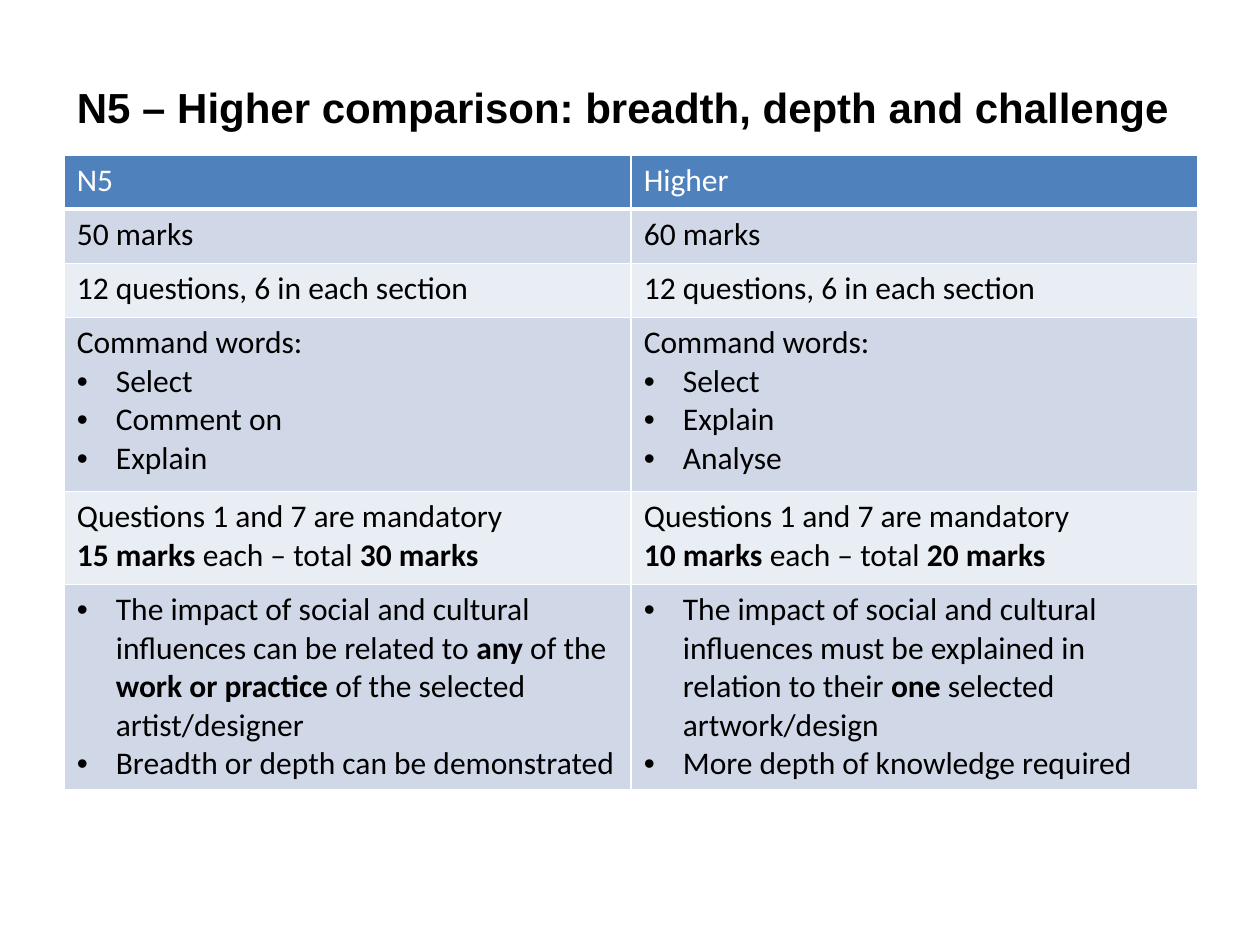
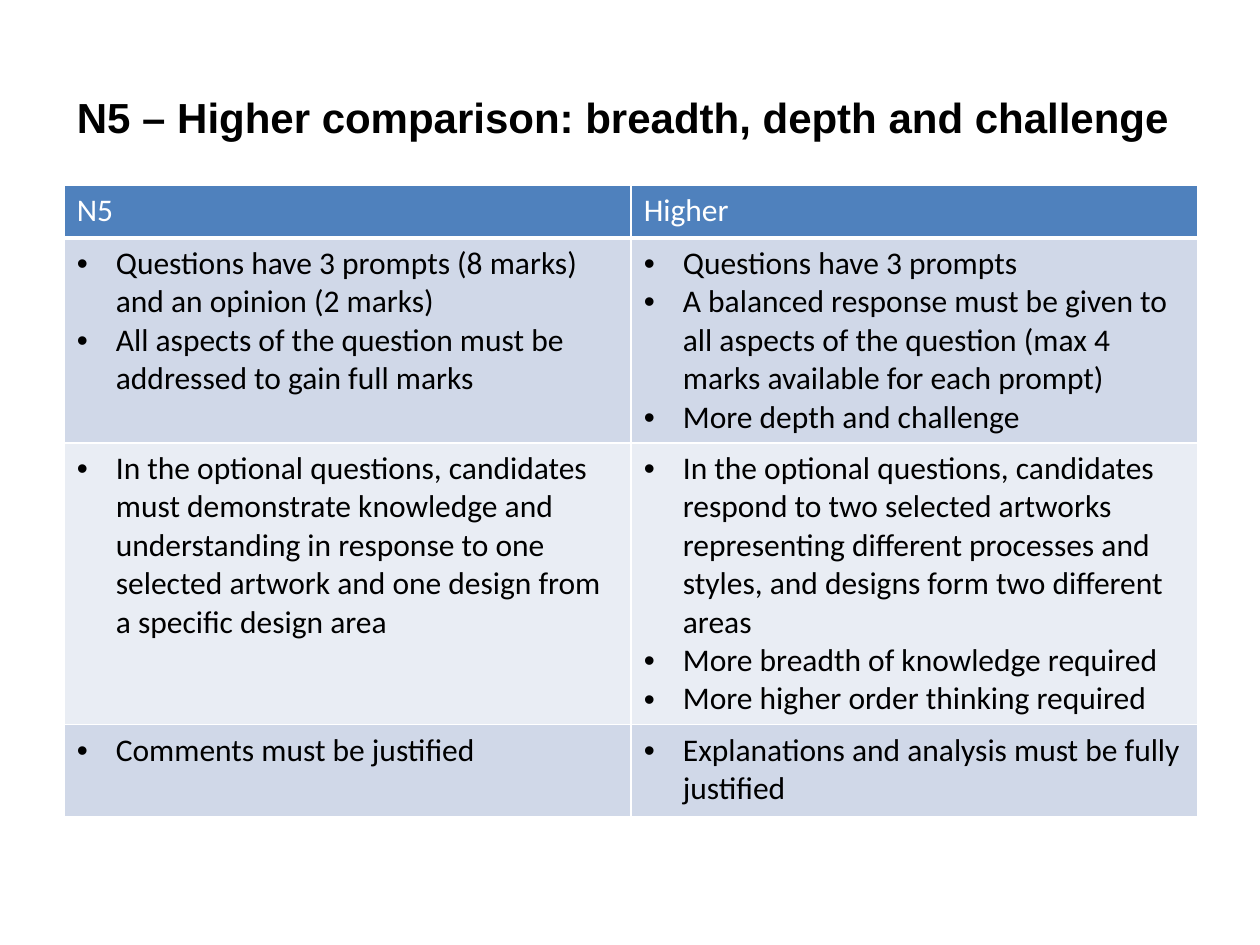
from lxml import etree
from pptx import Presentation
from pptx.dml.color import RGBColor
from pptx.enum.text import MSO_ANCHOR, MSO_AUTO_SIZE, PP_ALIGN
from pptx.oxml.ns import qn
from pptx.util import Inches, Pt

TITLE = "N5 – Higher comparison: breadth, depth and challenge"
HEADINGS = (["N5"], ["Higher"])
BULLET = "• "
BOLD_MARK = "**"

SLIDES = [
    {
        "title_top": 0.6, "title_height": 0.63,
        "table_top": 1.23, "table_height": 5.02,
        "row_heights": [0.43, 0.43, 0.43, 1.38, 0.74, 1.38],
        "rows": [
            HEADINGS,
            (["50 marks"], ["60 marks"]),
            (["12 questions, 6 in each section"], ["12 questions, 6 in each section"]),
            (["Command words:", "• Select", "• Comment on", "• Explain"],
             ["Command words:", "• Select", "• Explain", "• Analyse"]),
            (["Questions 1 and 7 are mandatory", "**15 marks** each – total **30 marks**"],
             ["Questions 1 and 7 are mandatory", "**10 marks** each – total **20 marks**"]),
            (["• The impact of social and cultural influences can be related to **any** of the "
              "**work or practice **of the selected artist/designer",
              "• Breadth or depth can be demonstrated"],
             ["• The impact of social and cultural influences must be explained in relation to "
              "their **one** selected artwork/design",
              "• More depth of knowledge required"]),
        ],
    },
    {
        "title_top": 0.68, "title_height": 0.55,
        "table_top": 1.47, "table_height": 4.95,
        "row_heights": [0.42, 1.36, 2.07, 0.73],
        "rows": [
            HEADINGS,
            (["• Questions have 3 prompts (8 marks) and an opinion (2 marks)",
              "• All aspects of the question must be addressed to gain full marks"],
             ["• Questions have 3 prompts",
              "• A balanced response must be given to all aspects of the question "
              "(max 4 marks available for each prompt)",
              "• More depth and challenge"]),
            (["• In the optional questions, candidates must demonstrate knowledge and "
              "understanding in response to one selected artwork and one design from a "
              "specific design area"],
             ["• In the optional questions, candidates respond to two selected artworks "
              "representing different processes and styles, and designs form two different areas",
              "• More breadth of knowledge required",
              "• More higher order thinking required"]),
            (["• Comments must be justified"],
             ["• Explanations and analysis must be fully justified"]),
        ],
    },
]

LEFT, WIDTH = Inches(0.51), Inches(9)
INDENT = Inches(0.31)
TITLE_FONT, TABLE_FONT = "Arial", "Calibri"
TITLE_SIZE, TABLE_SIZE = Pt(24), Pt(18)
BLACK = RGBColor(0x00, 0x00, 0x00)
WHITE = RGBColor(0xFF, 0xFF, 0xFF)
HEADER_BLUE = RGBColor(0x4F, 0x81, 0xBD)
BANDS = [RGBColor(0xD0, 0xD8, 0xE8), RGBColor(0xE9, 0xED, 0xF4)]
HEADER_BORDERS = {"lnL": 1, "lnR": 1, "lnT": 1, "lnB": 3}
ALIGN_LEFT = PP_ALIGN.LEFT
ANCHOR_TOP = MSO_ANCHOR.TOP
NO_AUTOFIT = MSO_AUTO_SIZE.NONE
TITLE_ONLY = 5


def style_span(span, font_name, size, color, bold):
    span.font.name = font_name
    span.font.size = size
    span.font.bold = bold
    span.font.color.rgb = color


def add_title(page, top, height):
    box = page.shapes.title
    box.left, box.top, box.width, box.height = LEFT, Inches(top), WIDTH, Inches(height)
    frame = box.text_frame
    frame.text = TITLE
    frame.word_wrap = True
    frame.auto_size = NO_AUTOFIT
    frame.vertical_anchor = ANCHOR_TOP
    para = frame.paragraphs[0]
    para.alignment = ALIGN_LEFT
    style_span(para.runs[0], TITLE_FONT, TITLE_SIZE, BLACK, True)


def add_bullet(para):
    properties = para._p.get_or_add_pPr()
    properties.set("marL", str(INDENT))
    properties.set("indent", str(-INDENT))
    etree.SubElement(properties, qn("a:buFont"), typeface=TITLE_FONT)
    etree.SubElement(properties, qn("a:buChar"), char=BULLET.strip())


def add_header_borders(cell):
    properties = cell._tc.get_or_add_tcPr()
    for position, (side, points) in enumerate(HEADER_BORDERS.items()):
        line = etree.Element(qn(f"a:{side}"), w=str(Pt(points)))
        fill = etree.SubElement(line, qn("a:solidFill"))
        etree.SubElement(fill, qn("a:srgbClr"), val=str(WHITE))
        properties.insert(position, line)


def fill_cell(cell, lines, background, color):
    cell.fill.solid()
    cell.fill.fore_color.rgb = background
    frame = cell.text_frame
    for index, line in enumerate(lines):
        para = frame.paragraphs[0] if index == 0 else frame.add_paragraph()
        if line.startswith(BULLET):
            add_bullet(para)
        for part, text in enumerate(line.removeprefix(BULLET).split(BOLD_MARK)):
            if text:
                span = para.add_run()
                span.text = text
                style_span(span, TABLE_FONT, TABLE_SIZE, color, part % 2 == 1)


def add_comparison(page, content):
    rows = content["rows"]
    columns = len(HEADINGS)
    height = Inches(content["table_height"])
    graphic = page.shapes.add_table(
        len(rows), columns, LEFT, Inches(content["table_top"]), WIDTH, height)
    table = graphic.table
    for row_index, row in enumerate(rows):
        table.rows[row_index].height = Inches(content["row_heights"][row_index])
        is_header = row_index == 0
        background = HEADER_BLUE if is_header else BANDS[(row_index - 1) % 2]
        color = WHITE if is_header else BLACK
        for column_index, lines in enumerate(row):
            cell = table.cell(row_index, column_index)
            fill_cell(cell, lines, background, color)
            if is_header:
                add_header_borders(cell)
    graphic.height = height


def main():
    deck = Presentation()
    deck.slide_width, deck.slide_height = Inches(10), Inches(7.5)
    for content in SLIDES:
        page = deck.slides.add_slide(deck.slide_layouts[TITLE_ONLY])
        add_title(page, content["title_top"], content["title_height"])
        add_comparison(page, content)
    deck.save("out.pptx")


if __name__ == "__main__":
    main()
